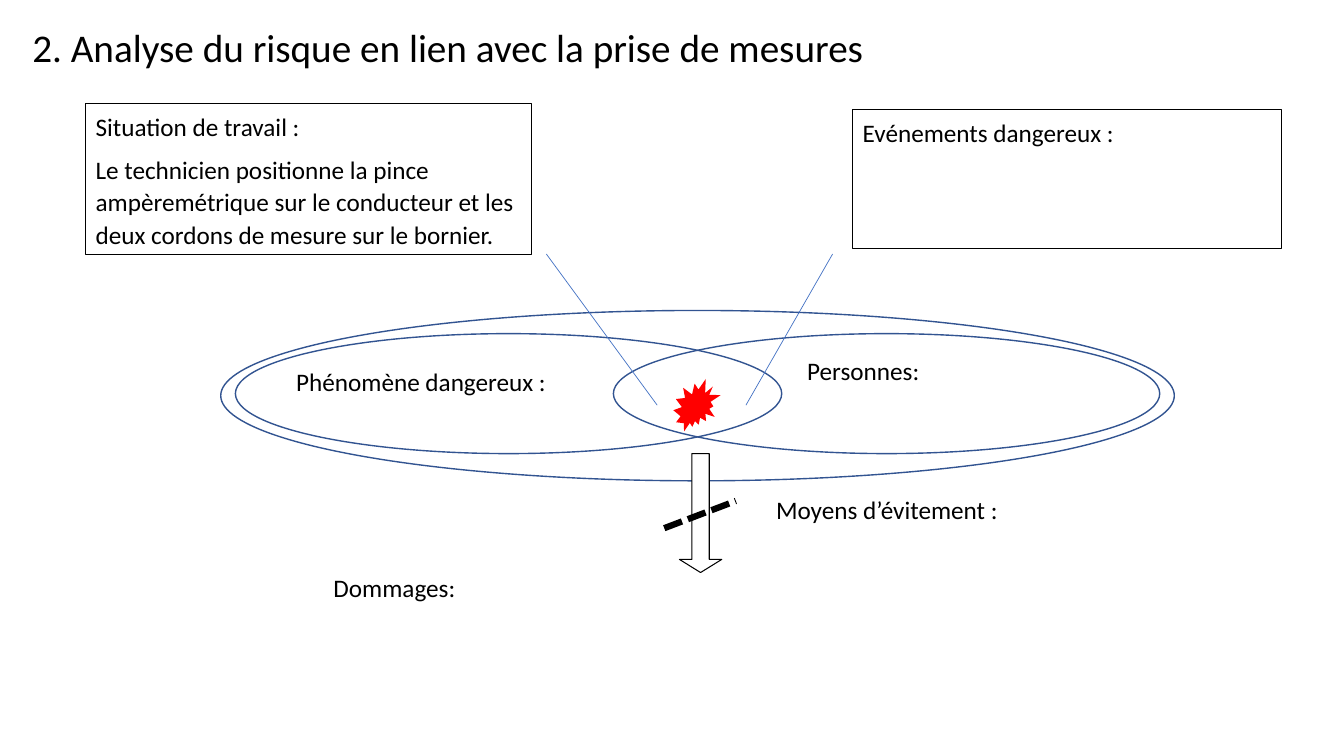
"""Build a risk analysis slide on a grid of 0.1 inch cells."""
from dataclasses import dataclass
from lxml.etree import SubElement
from pptx import Presentation
from pptx.dml.color import RGBColor as Rgb
from pptx.enum.dml import MSO_LINE as Dash
from pptx.enum.shapes import MSO_CONNECTOR as Link, MSO_SHAPE as Kind
from pptx.enum.text import MSO_ANCHOR as Anchor, PP_ALIGN as Align
from pptx.oxml.ns import qn
from pptx.util import Inches, Pt


@dataclass(frozen=True)
class Theme:
    font: str = "Calibri"
    head: int = 28
    body: int = 18
    ink: str = "000000"
    paper: str = "FFFFFF"
    ring: str = "325491"
    ray: str = "4472C4"
    burst: str = "FF0000"
    thin: float = 0.5
    edge: float = 0.75
    curve: float = 1
    bar: float = 4.5


LOOK = Theme()
CELL = 0.1
COLS, ROWS = 133.33, 75

TITLE = ("2. Analyse du risque en lien avec la prise de mesures", (2.2, 1.8, 91.3, 5.7))
BOXES = [
    ((8.5, 10.3, 44.2, 15), [
        "Situation de travail\u00a0:",
        "Le technicien positionne la pince ampèremétrique sur le conducteur "
        "et les deux cordons de mesure sur le bornier.",
    ]),
    ((84.6, 10.9, 42.5, 13.8), ["Evénements dangereux\u00a0:"]),
]
LABELS = [
    ((28.4, 35.6, 27, 4.1), "Phénomène dangereux\u00a0:"),
    ((79.1, 34.5, 27, 4.1), "Personnes:"),
    ((76, 48.3, 33.1, 4.1), "Moyens d’évitement\u00a0:"),
    ((32.1, 56.1, 33.1, 4.1), "Dommages:"),
]
OUTER = (21.9, 30.8, 94.6, 16.9)
INNER = (54.2, 11.9)
SIDE, DROP = 1.45, 2.3
SEAL = (66.8, 37.6, 4.7, 5.2)
ARROW = (67.4, 45, 4.2, 11.8)
RAYS = [(54.2, 25.2, 65.2, 40.2), (82.6, 25.2, 74, 40.2)]
STOP = (65.9, 52.4, 73, 49.7)


def size(*cells):
    return [Inches(n * CELL) for n in cells]


def shape(kind, area, fill=None, line=None, width=0):
    item = slide.shapes.add_shape(kind, *size(*area))
    item.shadow.inherit = False
    if fill:
        item.fill.solid()
        item.fill.fore_color.rgb = Rgb.from_string(fill)
    else:
        item.fill.background()
    if line:
        item.line.color.rgb = Rgb.from_string(line)
        item.line.width = Pt(width)
    else:
        item.line.fill.background()
    return item


def stroke(ends, color, width):
    item = slide.shapes.add_connector(Link.STRAIGHT, *size(*ends))
    item.line.color.rgb = Rgb.from_string(color)
    item.line.width = Pt(width)
    SubElement(item._element.spPr, qn("a:effectLst"))
    return item


def style(para, points):
    para.alignment = Align.LEFT
    para.font.name = LOOK.font
    para.font.size = Pt(points)
    para.font.color.rgb = Rgb.from_string(LOOK.ink)


def write(item, lines):
    frame = item.text_frame
    frame.word_wrap = True
    frame.vertical_anchor = Anchor.TOP
    frame.text = "\n".join(lines)
    for para in frame.paragraphs:
        style(para, LOOK.body)
        para.line_spacing = 1.07
        para.space_after = Pt(8)


deck = Presentation()
deck.slide_width, deck.slide_height = size(COLS, ROWS)
slide = deck.slides.add_slide(deck.slide_layouts[5])

text, area = TITLE
head = slide.shapes.title
head.left, head.top, head.width, head.height = size(*area)
head.text_frame.text = text
head.text_frame.vertical_anchor = Anchor.TOP
style(head.text_frame.paragraphs[0], LOOK.head)

for area, lines in BOXES:
    write(shape(Kind.RECTANGLE, area, line=LOOK.ink, width=LOOK.edge), lines)

left, top, wide, high = OUTER
starts = (left + SIDE, left + wide - SIDE - INNER[0])
for area in [OUTER] + [(x, top + DROP, *INNER) for x in starts]:
    shape(Kind.OVAL, area, line=LOOK.ring, width=LOOK.curve)
shape(Kind.EXPLOSION2, SEAL, fill=LOOK.burst)
for ends in RAYS:
    stroke(ends, LOOK.ray, LOOK.thin)

for area, text in LABELS:
    write(slide.shapes.add_textbox(*size(*area)), [text])

arrow = shape(Kind.DOWN_ARROW, ARROW, LOOK.paper, LOOK.ink, LOOK.edge)
arrow.adjustments[0], arrow.adjustments[1] = 0.41, 0.31
stroke(STOP, LOOK.ink, LOOK.bar).line.dash_style = Dash.SQUARE_DOT

deck.save("out.pptx")
